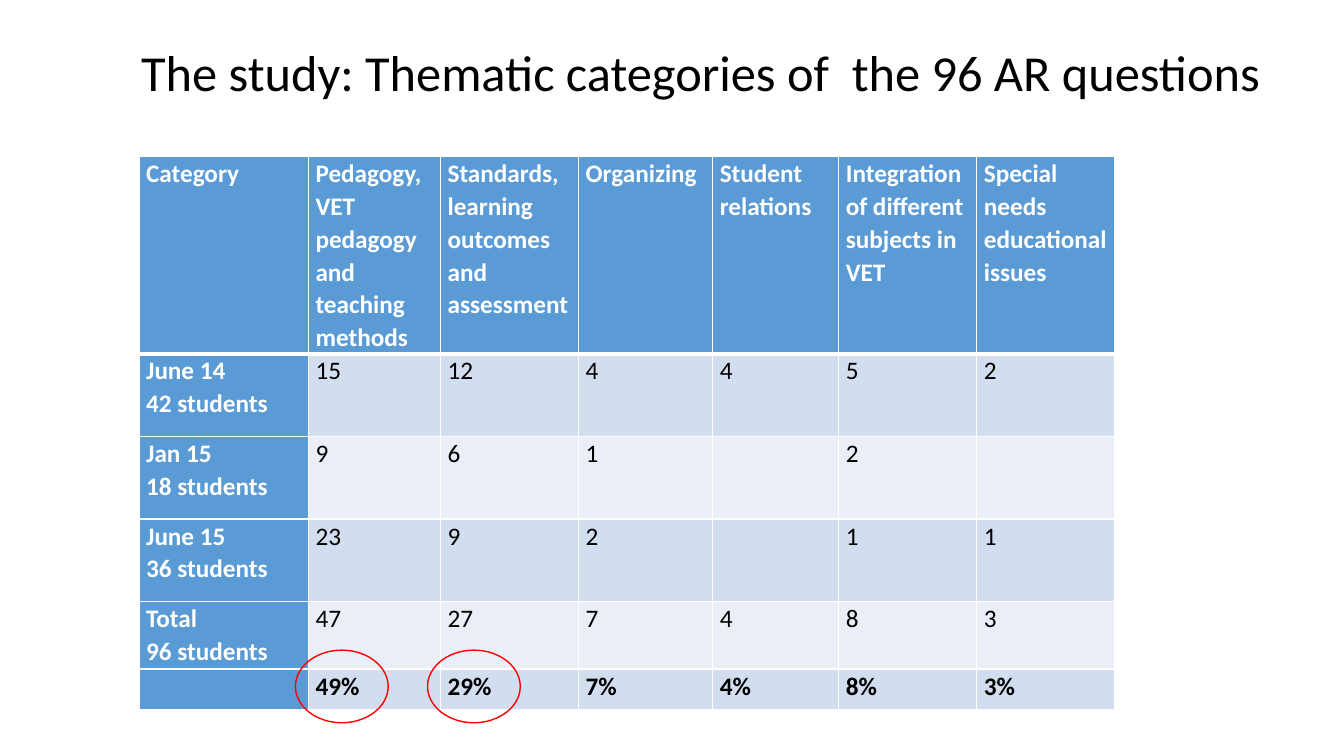
"""Build the slide with the thematic categories of the action research questions."""
from dataclasses import dataclass

from lxml import etree
from pptx import Presentation
from pptx.dml.color import RGBColor
from pptx.enum import shapes, text
from pptx.oxml import ns
from pptx.util import Inches, Pt

HEADING = "The study: Thematic categories of  the 96 AR questions"
ROWS = [
    ["Category", "Pedagogy, VET pedagogy and teaching methods",
     "Standards, learning outcomes and assessment", "Organizing", "Student relations",
     "Integration of different subjects in VET", "Special needs educational issues"],
    ["June 14\n42 students", "15", "12", "4", "4", "5", "2"],
    ["Jan 15\n18 students", "9", "6", "1", "", "2", ""],
    ["June 15\n36 students", "23", "9", "2", "", "1", "1"],
    ["Total \n96 students", "47", "27", "7", "4", "8", "3"],
    ["", "49%", "29%", "7%", "4%", "8%", "3%"],
]
CIRCLED_COLUMNS = (1, 2)
COLUMN_WIDTHS = [1.68, 1.31, 1.37, 1.33, 1.25, 1.37, 1.37]
ROW_HEIGHTS = [1.95, 0.82, 0.82, 0.82, 0.67, 0.4]
TABLE_LEFT, TABLE_TOP = 1.38, 1.55
CIRCLE_WIDTH, CIRCLE_HEIGHT = 0.92, 0.72
CIRCLE_DX, CIRCLE_DY = -0.13, -0.18


@dataclass(frozen=True)
class Theme:
    font: str = "Calibri"
    heading_size: int = 36
    cell_size: int = 18
    ink: str = "000000"
    white: str = "FFFFFF"
    head: str = "5B9BD5"
    bands: tuple = ("EAEFF7", "D2DEEF")
    circle: str = "FF0000"


THEME = Theme()


def add_text(paragraph, words, size, color, bold=False):
    for number, line in enumerate(words.split("\n")):
        if number:
            paragraph.add_line_break()
        run = paragraph.add_run()
        run.text = line
        run.font.name = THEME.font
        run.font.size = Pt(size)
        run.font.bold = bold
        run.font.color.rgb = RGBColor.from_string(color)


def add_borders(cell, is_header):
    properties = cell._tc.get_or_add_tcPr()
    for side in ("lnL", "lnR", "lnT", "lnB"):
        weight = 3 if is_header and side == "lnB" else 1
        border = etree.SubElement(properties, ns.qn(f"a:{side}"), w=str(Pt(weight)))
        fill = etree.SubElement(border, ns.qn("a:solidFill"))
        etree.SubElement(fill, ns.qn("a:srgbClr"), val=THEME.white)


def fill_cell(cell, words, row, column):
    is_head = row == 0 or column == 0
    is_last = row == len(ROWS) - 1
    cell.margin_left = cell.margin_right = Inches(0.07)
    cell.margin_top = cell.margin_bottom = 0
    add_borders(cell, row == 0)
    cell.fill.solid()
    cell.fill.fore_color.rgb = RGBColor.from_string(
        THEME.head if is_head else THEME.bands[row % 2])
    paragraph = cell.text_frame.paragraphs[0]
    paragraph.line_spacing = 1.07
    if words:
        add_text(paragraph, words, THEME.cell_size,
                 THEME.white if is_head else THEME.ink, is_head or is_last)


def add_heading(slide):
    heading = slide.shapes.title
    heading.left, heading.top = Inches(1.3), Inches(0.4)
    heading.width, heading.height = Inches(11.5), Inches(0.69)
    frame = heading.text_frame
    frame.auto_size = text.MSO_AUTO_SIZE.NONE
    frame.vertical_anchor = text.MSO_ANCHOR.MIDDLE
    paragraph = frame.paragraphs[0]
    paragraph.alignment = text.PP_ALIGN.LEFT
    paragraph.line_spacing = 0.9
    add_text(paragraph, HEADING, THEME.heading_size, THEME.ink)


def add_categories(slide):
    categories = slide.shapes.add_table(
        len(ROWS), len(COLUMN_WIDTHS), Inches(TABLE_LEFT), Inches(TABLE_TOP),
        Inches(sum(COLUMN_WIDTHS)), Inches(sum(ROW_HEIGHTS))).table
    categories.first_row = categories.horz_banding = False
    for column, width in zip(categories.columns, COLUMN_WIDTHS):
        column.width = Inches(width)
    for row, height in zip(categories.rows, ROW_HEIGHTS):
        row.height = Inches(height)
    for row, entries in enumerate(ROWS):
        for column, words in enumerate(entries):
            fill_cell(categories.cell(row, column), words, row, column)


def add_circles(slide):
    top = TABLE_TOP + sum(ROW_HEIGHTS[:-1]) + CIRCLE_DY
    for column in CIRCLED_COLUMNS:
        left = TABLE_LEFT + sum(COLUMN_WIDTHS[:column]) + CIRCLE_DX
        circle = slide.shapes.add_shape(
            shapes.MSO_SHAPE.OVAL, Inches(left), Inches(top),
            Inches(CIRCLE_WIDTH), Inches(CIRCLE_HEIGHT))
        circle.shadow.inherit = False
        circle.fill.background()
        circle.line.color.rgb = RGBColor.from_string(THEME.circle)
        circle.line.width = Pt(1)


def main():
    deck = Presentation()
    deck.slide_width, deck.slide_height = Inches(13.33), Inches(7.5)
    slide = deck.slides.add_slide(deck.slide_layouts[5])
    add_heading(slide)
    add_categories(slide)
    add_circles(slide)
    deck.save("out.pptx")


if __name__ == "__main__":
    main()
